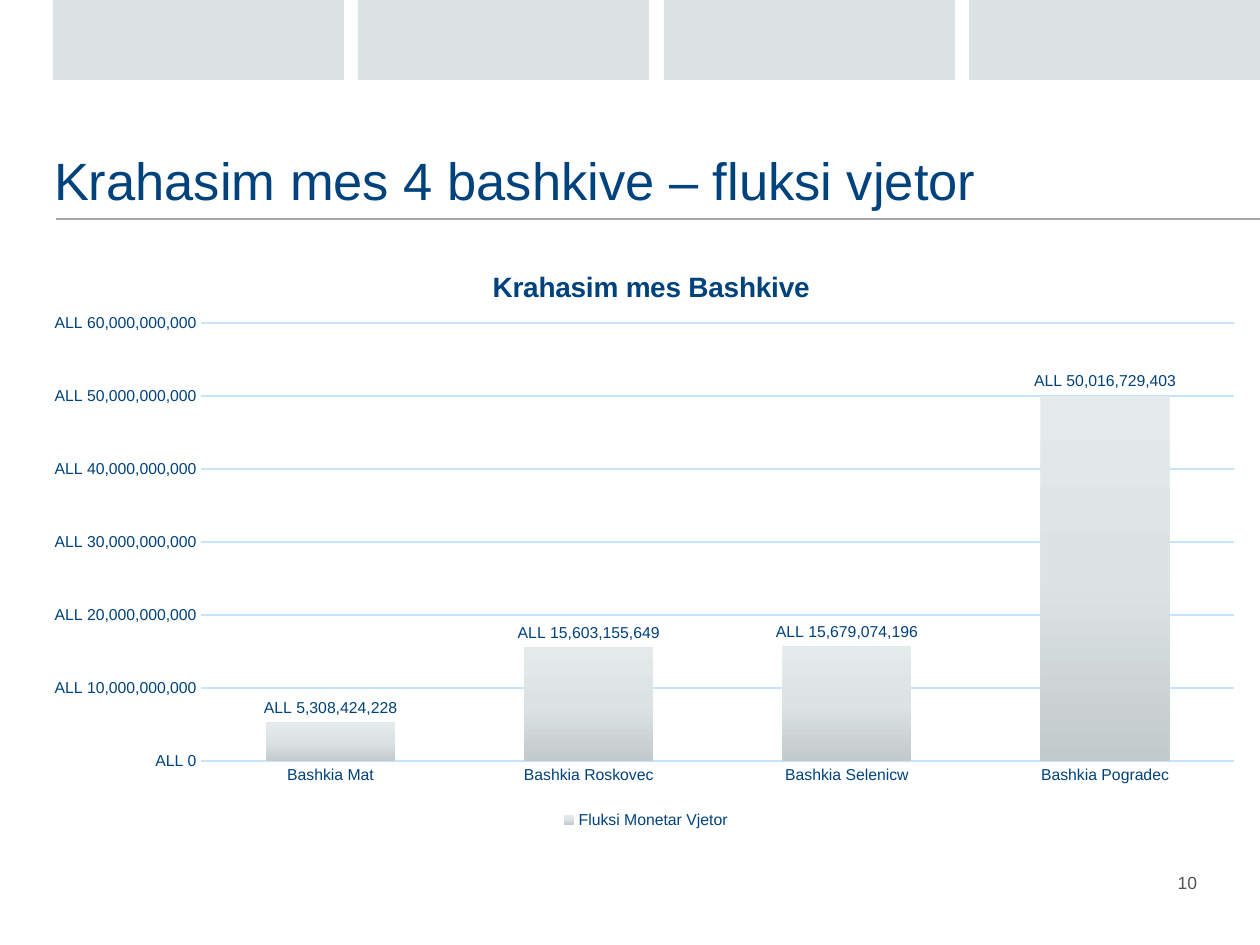
from dataclasses import dataclass

from lxml import etree
from pptx import Presentation
from pptx.chart.data import CategoryChartData
from pptx.dml.color import RGBColor
from pptx.enum.chart import XL_CHART_TYPE, XL_LABEL_POSITION, XL_LEGEND_POSITION, XL_TICK_MARK
from pptx.enum.shapes import MSO_CONNECTOR, MSO_SHAPE
from pptx.enum.text import MSO_ANCHOR, PP_ALIGN
from pptx.oxml import parse_xml
from pptx.oxml.ns import nsdecls, qn
from pptx.util import Emu, Pt

PX_PER_INCH = 126
FONT = "Arial"
COLORS = {
    "navy": "00427C",
    "gray": "545454",
    "rule": "A6A6A6",
    "band": "DDE3E4",
    "grid": "C5E4FF",
    "bar_top": "E4E9EA",
    "bar_bottom": "C3CACC",
}
BAR_STOPS = {0: "bar_top", 50: "band", 100: "bar_bottom"}
CASH_FORMAT = r"[$ALL]\ #,##0;[Red][$ALL]\ #,##0"
CASH_FLOWS = {
    "Bashkia Mat": 5308424228,
    "Bashkia Roskovec": 15603155649,
    "Bashkia Selenicw": 15679074196,
    "Bashkia Pogradec": 50016729403,
}


@dataclass
class Box:
    x: int
    y: int
    w: int
    h: int

    def emu(self) -> tuple:
        return tuple(px(v) for v in (self.x, self.y, self.w, self.h))


@dataclass
class Label:
    text: str
    box: Box
    size: int
    color: str
    inset: int
    align: PP_ALIGN
    anchor: MSO_ANCHOR


BAND_WIDTH = 291
BANDS = [Box(53 + round(i * 916 / 3), 0, BAND_WIDTH, 80) for i in range(4)]
LABELS = [
    Label("10", Box(1128, 868, 82, 47), 10, "gray", 13, PP_ALIGN.RIGHT, MSO_ANCHOR.TOP),
    Label("Krahasim mes 4 bashkive – fluksi vjetor", Box(54, 95, 1102, 123), 30, "navy", 0,
          PP_ALIGN.LEFT, MSO_ANCHOR.BOTTOM),
]
CHART = Box(32, 237, 1228, 597)
PLOT = Box(202, 323, 1033, 438)
CHART_TITLE = Box(487, 264, 0, 0)


def px(v: int) -> Emu:
    return Emu(round(v * 914400 / PX_PER_INCH))


def rgb(name: str) -> RGBColor:
    return RGBColor.from_string(COLORS[name])


def style_font(font, size: int, color: str, bold: bool = False) -> None:
    font.name = FONT
    font.size = Pt(size)
    font.bold = bold
    font.color.rgb = rgb(color)


def style_line(line, color: str) -> None:
    line.color.rgb = rgb(color)
    line.width = Pt(0.75)


def draw_rule(s, x1: int, x2: int, y: int) -> None:
    c = s.shapes.add_connector(MSO_CONNECTOR.STRAIGHT, px(x1), px(y), px(x2), px(y))
    style_line(c.line, "rule")
    etree.SubElement(c._element.spPr, qn("a:effectLst"))


def draw_band(s, box: Box) -> None:
    sp = s.shapes.add_shape(MSO_SHAPE.RECTANGLE, *box.emu())
    sp.shadow.inherit = False
    sp.fill.solid()
    sp.fill.fore_color.rgb = rgb("band")
    sp.line.fill.background()


def draw_label(s, label: Label) -> None:
    tf = s.shapes.add_textbox(*label.box.emu()).text_frame
    tf.word_wrap = True
    tf.vertical_anchor = label.anchor
    tf.margin_left = tf.margin_right = px(label.inset)
    tf.margin_top = tf.margin_bottom = px(6)
    p = tf.paragraphs[0]
    p.text = label.text
    p.alignment = label.align
    p.line_spacing = 0.9
    style_font(p.font, label.size, label.color)


def manual_layout(box: Box, inner: bool):
    values = {"x": (box.x - CHART.x) / CHART.w, "y": (box.y - CHART.y) / CHART.h}
    if inner:
        values |= {"w": box.w / CHART.w, "h": box.h / CHART.h}
    target = '<c:layoutTarget val="inner"/>' if inner else ""
    modes = '<c:xMode val="edge"/><c:yMode val="edge"/>'
    sizes = "".join(f'<c:{k} val="{v:.3f}"/>' for k, v in values.items())
    return parse_xml(f'<c:layout {nsdecls("c")}><c:manualLayout>{target}{modes}{sizes}'
                     "</c:manualLayout></c:layout>")


def place(parent, layout, index: int) -> None:
    for old in parent.findall(qn("c:layout")):
        parent.remove(old)
    parent.insert(index, layout)


def fill_gradient(series) -> None:
    stops = "".join(f'<a:gs pos="{pos * 1000}"><a:srgbClr val="{COLORS[name]}"/></a:gs>'
                    for pos, name in BAR_STOPS.items())
    series.format.fill.background()
    sp_pr = series._element.find(qn("c:spPr"))
    gradient = parse_xml(f'<a:gradFill {nsdecls("a")} rotWithShape="1"><a:gsLst>{stops}</a:gsLst>'
                         '<a:lin ang="5400000" scaled="0"/></a:gradFill>')
    sp_pr.replace(sp_pr.find(qn("a:noFill")), gradient)
    series.format.line.fill.background()


def draw_chart(s) -> None:
    data = CategoryChartData(number_format=CASH_FORMAT)
    data.categories = list(CASH_FLOWS)
    data.add_series("Fluksi Monetar Vjetor", list(CASH_FLOWS.values()))
    chart = s.shapes.add_chart(XL_CHART_TYPE.COLUMN_CLUSTERED, *CHART.emu(), data).chart
    style_font(chart.font, 10, "gray")

    tf = chart.chart_title.text_frame
    tf.text = "Krahasim mes Bashkive"
    style_font(tf.paragraphs[0].font, 16, "navy", bold=True)
    chart.chart_title.include_in_layout = False
    place(chart.chart_title._element, manual_layout(CHART_TITLE, False), 1)
    place(chart._chartSpace.chart.plotArea, manual_layout(PLOT, True), 0)

    chart.has_legend = True
    chart.legend.position = XL_LEGEND_POSITION.BOTTOM
    chart.legend.include_in_layout = False
    style_font(chart.legend.font, 9, "navy")

    for axis in (chart.category_axis, chart.value_axis):
        axis.major_tick_mark = axis.minor_tick_mark = XL_TICK_MARK.NONE
        style_font(axis.tick_labels.font, 9, "navy")
    style_line(chart.category_axis.format.line, "grid")
    cash = chart.value_axis
    cash.minimum_scale, cash.maximum_scale, cash.major_unit = 0, 60e9, 10e9
    cash.format.line.fill.background()
    style_line(cash.major_gridlines.format.line, "grid")
    cash.tick_labels.number_format = CASH_FORMAT
    cash.tick_labels.number_format_is_linked = False

    plot = chart.plots[0]
    plot.gap_width = 100
    plot.overlap = -24
    plot.vary_by_categories = False
    fill_gradient(plot.series[0])
    labels = plot.series[0].data_labels
    labels.show_value = True
    labels.position = XL_LABEL_POSITION.OUTSIDE_END
    labels.number_format = CASH_FORMAT
    labels.number_format_is_linked = False
    style_font(labels.font, 9, "navy")


def main() -> None:
    prs = Presentation()
    prs.slide_width, prs.slide_height = px(1260), px(945)
    s = prs.slides.add_slide(prs.slide_layouts[6])
    draw_rule(s, 56, 1260, 219)
    for band in BANDS:
        draw_band(s, band)
    for label in LABELS:
        draw_label(s, label)
    draw_chart(s)
    prs.save("out.pptx")


if __name__ == "__main__":
    main()
